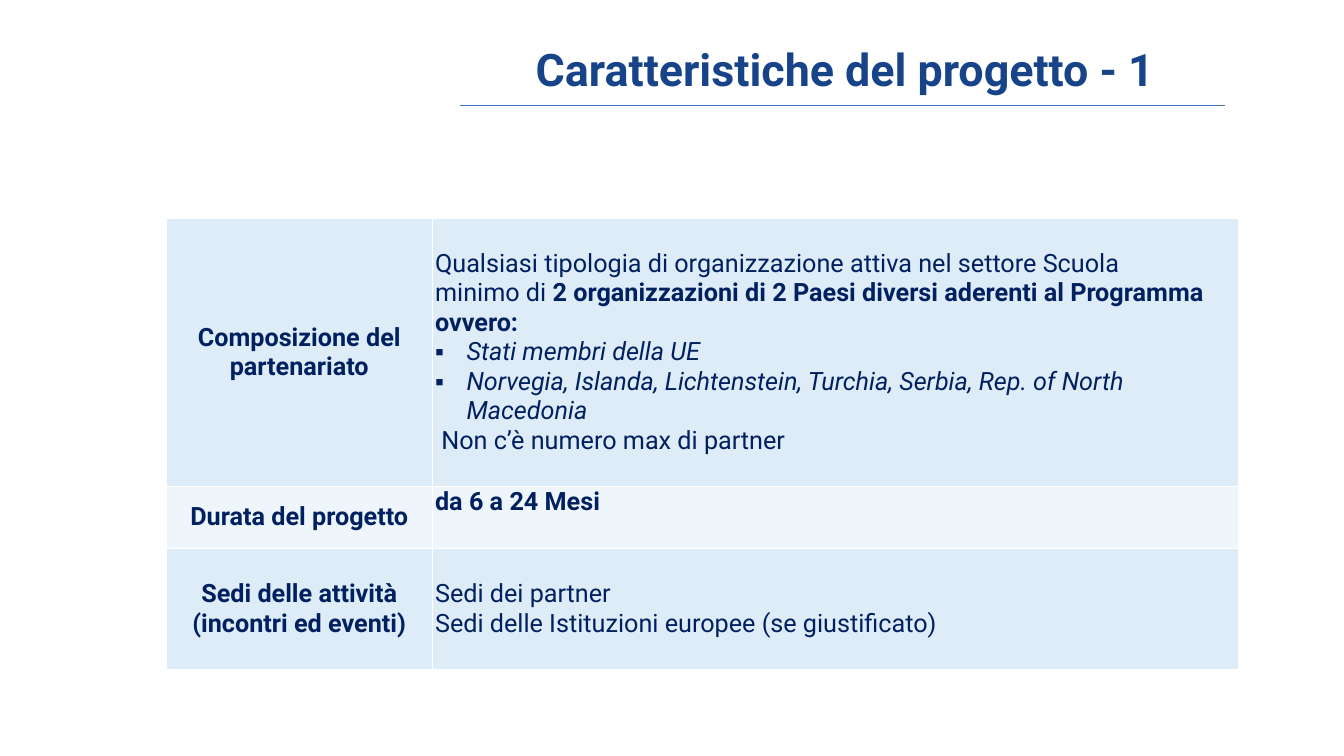
from lxml import etree
from pptx import Presentation
from pptx import util as u
from pptx.dml.color import RGBColor
from pptx.enum import shapes, text
from pptx.oxml.ns import qn

FONT = "Roboto"
NAVY, TITLE_BLUE, RULE_BLUE, WHITE = "002060", "174489", "4472C4", "FFFFFF"
BANDS = ["DEECF8", "EFF6FB"]
MIDDLE, TOP = text.MSO_ANCHOR.MIDDLE, text.MSO_ANCHOR.TOP

TITLE = "Caratteristiche del progetto - 1"
# Each detail paragraph: (layout, [(words, style)])
ROWS = [
    ("Composizione del partenariato", 192, MIDDLE, [
        ("plain", [("Qualsiasi tipologia di organizzazione attiva nel settore Scuola", "")]),
        ("plain", [("minimo di ", ""),
                   ("2 organizzazioni di 2 Paesi diversi aderenti al Programma ovvero:", "b")]),
        ("bullet", [("Stati membri della UE", "i")]),
        ("bullet", [("Norvegia, Islanda, Lichtenstein, Turchia, Serbia, Rep. of North Macedonia", "i")]),
        ("inset", [("Non c’è numero max di partner", "")]),
    ]),
    ("Durata del progetto", 44, TOP, [
        ("plain", [("da 6 a 24 Mesi", "b")]),
    ]),
    ("Sedi delle attività (incontri ed eventi)", 86.4, MIDDLE, [
        ("plain", [("Sedi dei partner", "")]),
        ("plain", [("Sedi delle Istituzioni europee (se giustificato)", "")]),
    ]),
]
COLUMNS = [189.6, 576]
INDENTS = {"bullet": (22.5, -22.5), "inset": (4.5, 0)}


def rgb(value):
    return RGBColor.from_string(value)


def style(run, size, color, bold=False, italic=False):
    run.font.name, run.font.size = FONT, u.Pt(size)
    run.font.bold, run.font.italic = bold, italic
    run.font.color.rgb = rgb(color)


def indent(paragraph, layout):
    if layout not in INDENTS:
        return
    margin, first = INDENTS[layout]
    props = paragraph._p.get_or_add_pPr()
    props.set("marL", str(u.Pt(margin)))
    props.set("indent", str(u.Pt(first)))
    if layout == "bullet":
        etree.SubElement(props, qn("a:buFont"), typeface="Arial")
        etree.SubElement(props, qn("a:buChar"), char="▪")


def dress(cell, fill, anchor):
    cell.margin_left = cell.margin_right = u.Pt(2.2)
    cell.margin_top = cell.margin_bottom = u.Pt(0.7)
    cell.vertical_anchor = anchor
    props = cell._tc.get_or_add_tcPr()
    for side in ("lnL", "lnR", "lnT", "lnB"):
        border = etree.SubElement(props, qn("a:" + side), w=str(u.Pt(0.5)))
        paint = etree.SubElement(border, qn("a:solidFill"))
        etree.SubElement(paint, qn("a:srgbClr"), val=WHITE)
    cell.fill.solid()
    cell.fill.fore_color.rgb = rgb(fill)


def add_title(slide):
    title = slide.shapes.add_textbox(u.Pt(322.6), u.Pt(14.4), u.Pt(562.3), u.Pt(69.1))
    frame = title.text_frame
    frame.word_wrap = True
    frame.vertical_anchor = MIDDLE
    frame.text = TITLE
    frame.paragraphs[0].alignment = text.PP_ALIGN.CENTER
    style(frame.paragraphs[0].runs[0], 32, TITLE_BLUE, bold=True)

    rule = slide.shapes.add_connector(
        shapes.MSO_CONNECTOR.STRAIGHT, u.Pt(328.4), u.Pt(75.5), u.Pt(875), u.Pt(75.5))
    rule.line.color.rgb = rgb(RULE_BLUE)
    rule.line.width = u.Pt(0.5)
    etree.SubElement(rule._element.spPr, qn("a:effectLst"))


def add_features(slide):
    features = slide.shapes.add_table(
        len(ROWS), len(COLUMNS), u.Pt(119), u.Pt(155.6),
        u.Pt(sum(COLUMNS)), u.Pt(sum(row[1] for row in ROWS))).table
    features.first_row = False
    for column, width in zip(features.columns, COLUMNS):
        column.width = u.Pt(width)
    for index, (heading, height, anchor, details) in enumerate(ROWS):
        features.rows[index].height = u.Pt(height)
        fill = BANDS[index % 2]

        label = features.cell(index, 0)
        dress(label, fill, MIDDLE)
        label.text_frame.text = heading
        label.text_frame.paragraphs[0].alignment = text.PP_ALIGN.CENTER
        style(label.text_frame.paragraphs[0].runs[0], 18, NAVY, bold=True)

        detail = features.cell(index, 1)
        dress(detail, fill, anchor)
        frame = detail.text_frame
        for number, (layout, pieces) in enumerate(details):
            paragraph = frame.add_paragraph() if number else frame.paragraphs[0]
            indent(paragraph, layout)
            for words, look in pieces:
                run = paragraph.add_run()
                run.text = words
                style(run, 18, NAVY, bold=look == "b", italic=look == "i")


def main():
    deck = Presentation()
    deck.slide_width, deck.slide_height = u.Pt(960), u.Pt(540)
    slide = deck.slides.add_slide(deck.slide_layouts[6])
    add_title(slide)
    add_features(slide)
    deck.save("out.pptx")


if __name__ == "__main__":
    main()
